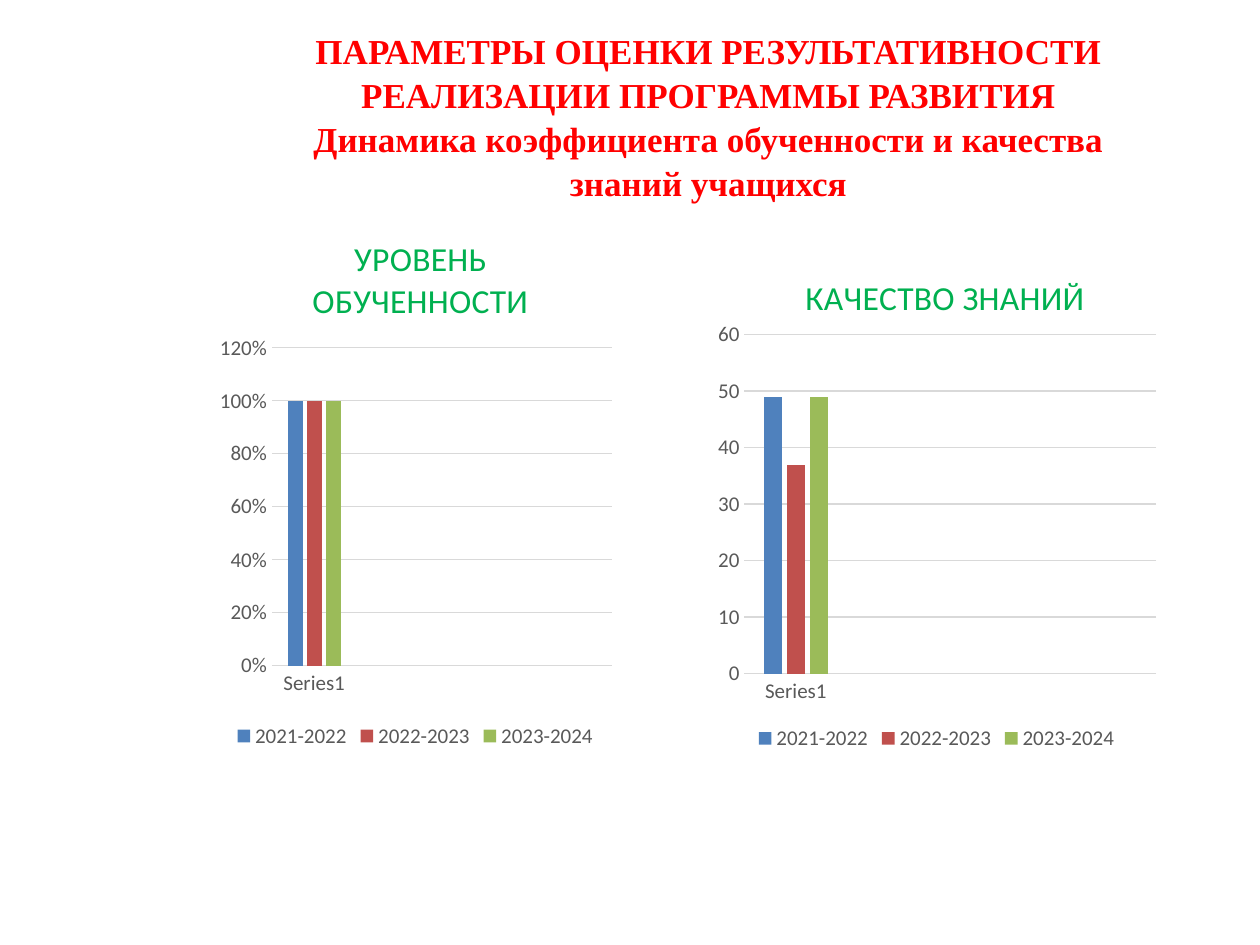
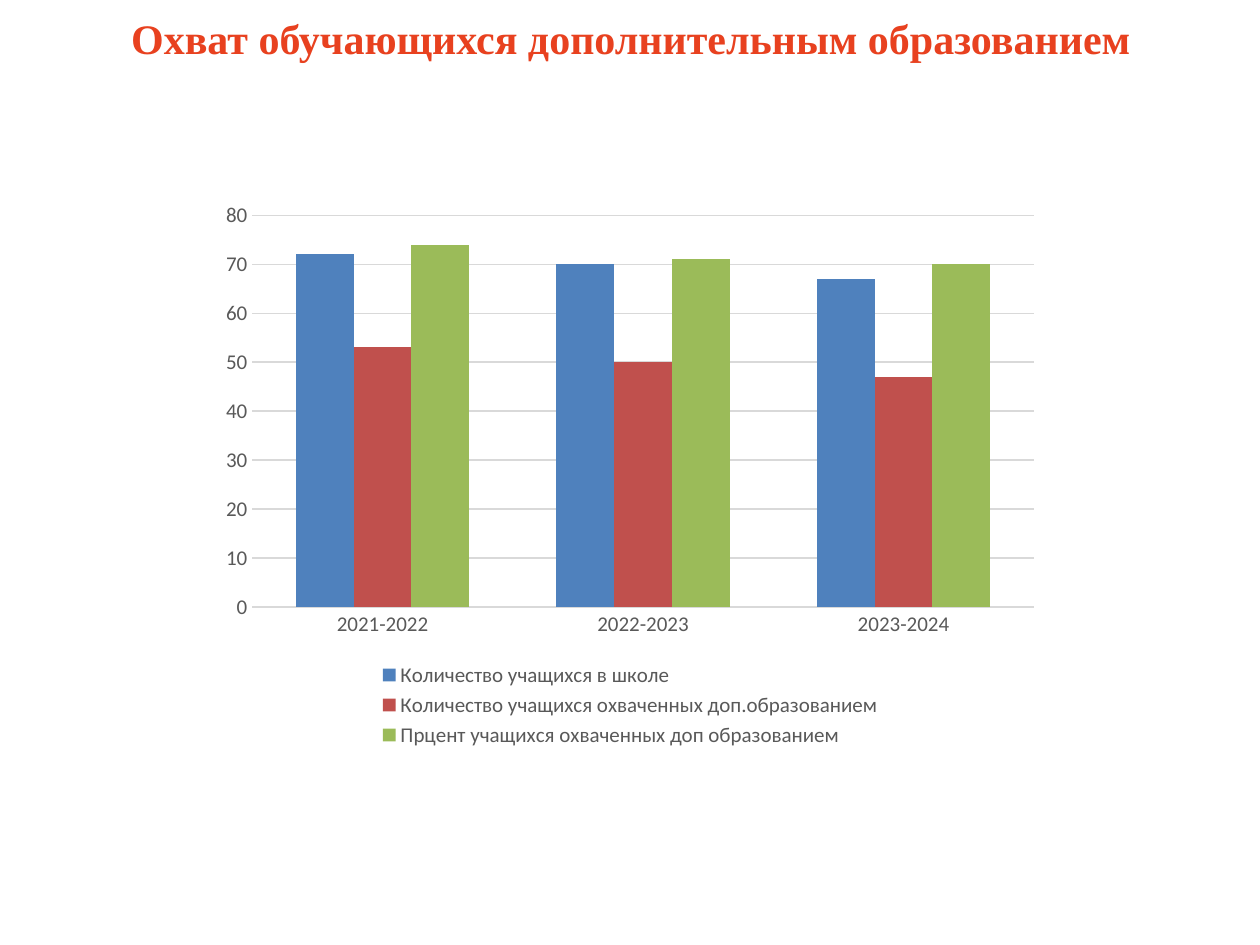
from dataclasses import dataclass
from typing import Optional

from lxml import etree
from pptx import Presentation
from pptx import util as u
from pptx.chart.chart import Chart
from pptx.chart.data import CategoryChartData
from pptx.dml.color import RGBColor
from pptx.enum import chart as charts, text
from pptx.oxml.ns import qn
from pptx.slide import Slide

COLORS = {
    "red": "FF0000",
    "orange": "E8411F",
    "green": "00B050",
    "label": "595959",
    "grid": "D9D9D9",
}
SERIES_COLORS = ("4F81BD", "C0504D", "9BBB59")
TITLE_FONT = "Times New Roman"
CHART_FONT = "Calibri"
YEARS = ("2021-2022", "2022-2023", "2023-2024")
SINGLE_GROUP = ("Series1", "", "", "")


@dataclass(frozen=True)
class Area:
    left: float
    top: float
    width: float
    height: float

    def lengths(self) -> tuple:
        return tuple(u.Cm(n) for n in (self.left, self.top, self.width, self.height))


@dataclass(frozen=True)
class Heading:
    wording: str
    area: Area
    size: int
    line_height: float
    color: str


@dataclass(frozen=True)
class ColumnChart:
    area: Area
    plot: Area
    categories: tuple
    series: dict
    maximum: float
    step: float
    number_format: str = "General"
    gap: int = 219
    overlap: int = -27
    base_line: bool = True
    title: Optional[str] = None
    title_left: float = 0
    title_top: float = 0.05


def rgb(name: str) -> RGBColor:
    return RGBColor.from_string(COLORS[name])


def style_font(font, name: str, size: float, color: str, bold: bool = False) -> None:
    font.name = name
    font.size = u.Pt(size)
    font.bold = bold
    font.color.rgb = rgb(color)


def place(parent, **settings) -> None:
    layout = parent.find(qn("c:layout"))
    if layout is None:
        layout = etree.Element(qn("c:layout"))
        parent.insert(0, layout)
    manual = etree.SubElement(layout, qn("c:manualLayout"))
    for key, value in settings.items():
        etree.SubElement(manual, qn(f"c:{key}")).set("val", str(value))


def add_heading(page: Slide, heading: Heading) -> None:
    box = page.shapes.add_textbox(*heading.area.lengths())
    frame = box.text_frame
    frame.word_wrap = True
    frame.margin_left = frame.margin_right = frame.margin_top = frame.margin_bottom = 0
    frame.text = heading.wording
    for para in frame.paragraphs:
        para.alignment = text.PP_ALIGN.CENTER
        para.line_spacing = u.Pt(heading.line_height)
        for span in para.runs:
            style_font(span.font, TITLE_FONT, heading.size, heading.color, True)


def style_axes(chart: Chart, item: ColumnChart) -> None:
    for axis in (chart.category_axis, chart.value_axis):
        axis.major_tick_mark = axis.minor_tick_mark = charts.XL_TICK_MARK.NONE
        style_font(axis.tick_labels.font, CHART_FONT, 12, "label")
        axis.format.line.fill.background()
    if item.base_line:
        line = chart.category_axis.format.line
        line.color.rgb = rgb("grid")
        line.width = u.Pt(0.75)
    values = chart.value_axis
    values.minimum_scale = 0
    values.maximum_scale = item.maximum
    values.major_unit = item.step
    values.tick_labels.number_format = item.number_format
    values.tick_labels.number_format_is_linked = False
    values.has_major_gridlines = True
    grid = values.major_gridlines.format.line
    grid.color.rgb = rgb("grid")
    grid.width = u.Pt(0.75)


def add_chart_title(chart: Chart, item: ColumnChart) -> None:
    chart.has_title = item.title is not None
    if item.title is None:
        return
    frame = chart.chart_title.text_frame
    frame.text = item.title
    for para in frame.paragraphs:
        para.alignment = text.PP_ALIGN.CENTER
        for span in para.runs:
            style_font(span.font, CHART_FONT, 19.2, "green")
    title = chart.element.find(".//" + qn("c:title"))
    place(title, xMode="edge", yMode="edge", x=item.title_left, y=item.title_top)


def add_column_chart(page: Slide, item: ColumnChart) -> None:
    data = CategoryChartData()
    data.categories = item.categories
    for name, values in item.series.items():
        padding = (None,) * (len(item.categories) - len(values))
        data.add_series(name, values + padding)
    chart = page.shapes.add_chart(
        charts.XL_CHART_TYPE.COLUMN_CLUSTERED, *item.area.lengths(), data
    ).chart
    chart.font.name = CHART_FONT
    chart.font.size = u.Pt(10)
    add_chart_title(chart, item)
    style_axes(chart, item)

    plot = chart.plots[0]
    plot.vary_by_categories = False
    plot.gap_width = item.gap
    plot.overlap = item.overlap
    for series, color in zip(plot.series, SERIES_COLORS):
        series.format.fill.solid()
        series.format.fill.fore_color.rgb = RGBColor.from_string(color)

    chart.has_legend = True
    chart.legend.position = charts.XL_LEGEND_POSITION.BOTTOM
    chart.legend.include_in_layout = False
    style_font(chart.legend.font, CHART_FONT, 12, "label")
    place(
        chart.element.find(".//" + qn("c:plotArea")),
        layoutTarget="inner", xMode="edge", yMode="edge",
        x=item.plot.left, y=item.plot.top, w=item.plot.width, h=item.plot.height,
    )


PAGES = (
    (
        Heading(
            "ПАРАМЕТРЫ ОЦЕНКИ РЕЗУЛЬТАТИВНОСТИ РЕАЛИЗАЦИИ ПРОГРАММЫ РАЗВИТИЯ\v"
            "Динамика коэффициента обученности и качества знаний учащихся",
            Area(6.15, 0.56, 16.26, 4.5), 20, 25.1, "red",
        ),
        (
            ColumnChart(
                Area(4.24, 4.14, 8.26, 11.05), Area(0.15, 0.26, 0.83, 0.58),
                SINGLE_GROUP, {year: (1,) for year in YEARS}, 1.2, 0.2, "0%",
                title="УРОВЕНЬ\nОБУЧЕННОСТИ", title_left=0.24,
            ),
            ColumnChart(
                Area(14.27, 4.88, 9.22, 10.36), Area(0.08, 0.18, 0.9, 0.66),
                SINGLE_GROUP, dict(zip(YEARS, ((49,), (37,), (49,)))), 60, 10,
                title="КАЧЕСТВО ЗНАНИЙ", title_left=0.2,
            ),
        ),
    ),
    (
        Heading(
            "Охват обучающихся дополнительным образованием",
            Area(2.39, 0.31, 20.65, 0.99), 24, 27.4, "orange",
        ),
        (
            ColumnChart(
                Area(4.24, 3.89, 16.94, 11.28), Area(0.05, 0.04, 0.93, 0.7),
                YEARS,
                {
                    "Количество учащихся в школе": (72, 70, 67),
                    "Количество учащихся охваченных доп.образованием": (53, 50, 47),
                    "Прцент учащихся охваченных доп образованием": (74, 71, 70),
                },
                80, 10, gap=150, overlap=0, base_line=False,
            ),
        ),
    ),
)


def main() -> None:
    deck = Presentation()
    deck.slide_width = u.Cm(25.4)
    deck.slide_height = u.Cm(19.05)
    for heading, column_charts in PAGES:
        page = deck.slides.add_slide(deck.slide_layouts[6])
        add_heading(page, heading)
        for item in column_charts:
            add_column_chart(page, item)
    deck.save("out.pptx")


if __name__ == "__main__":
    main()
